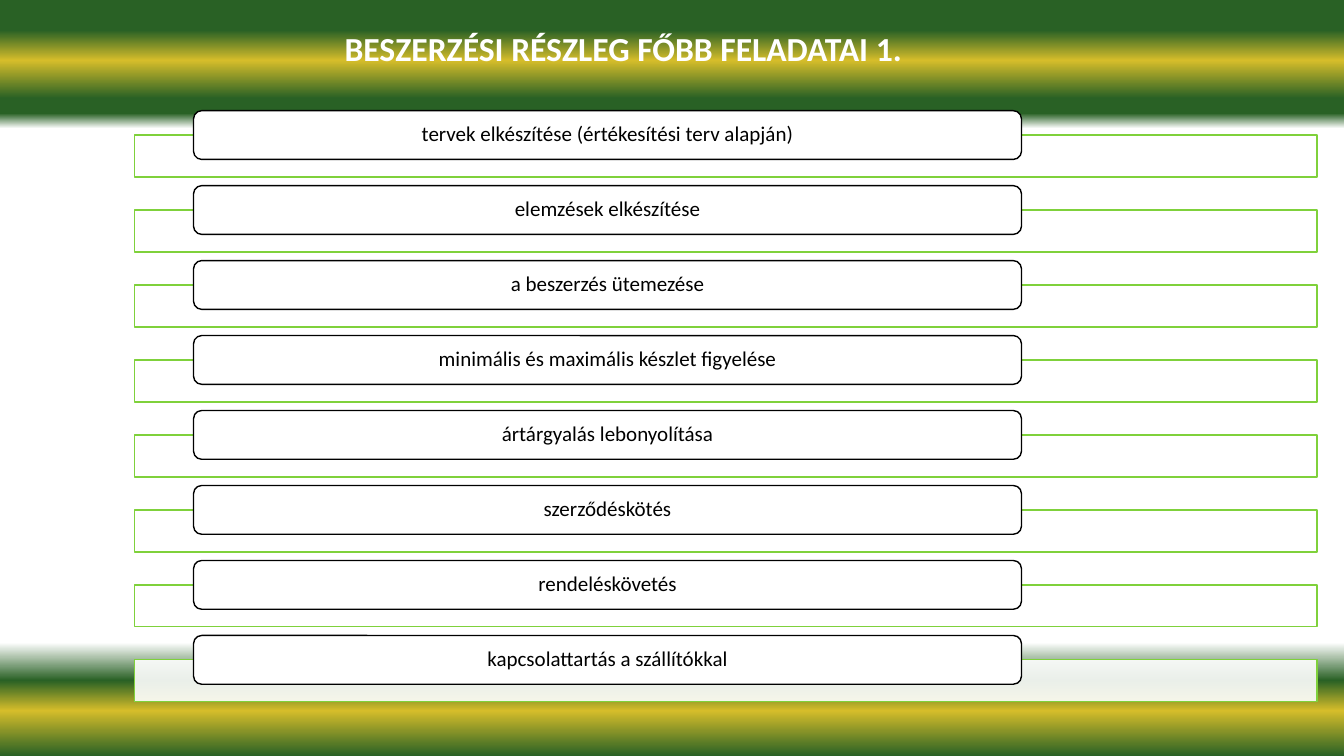
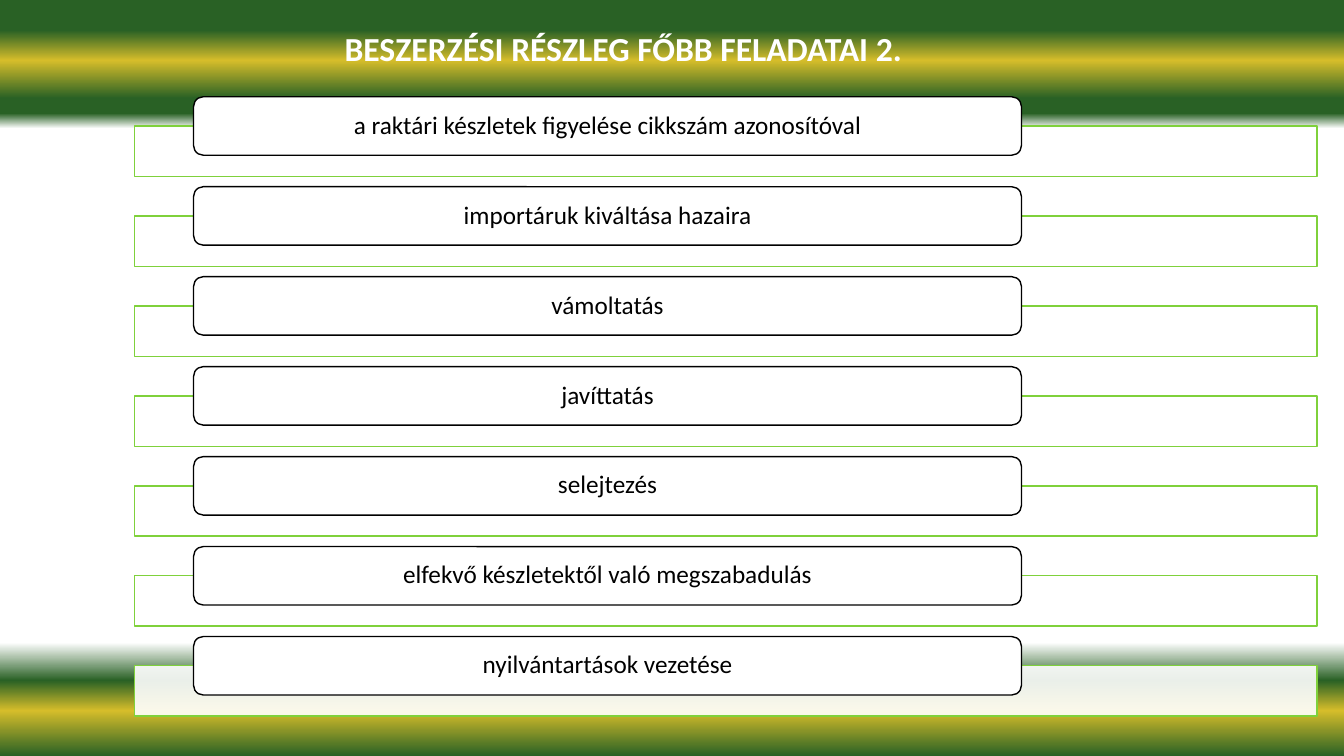
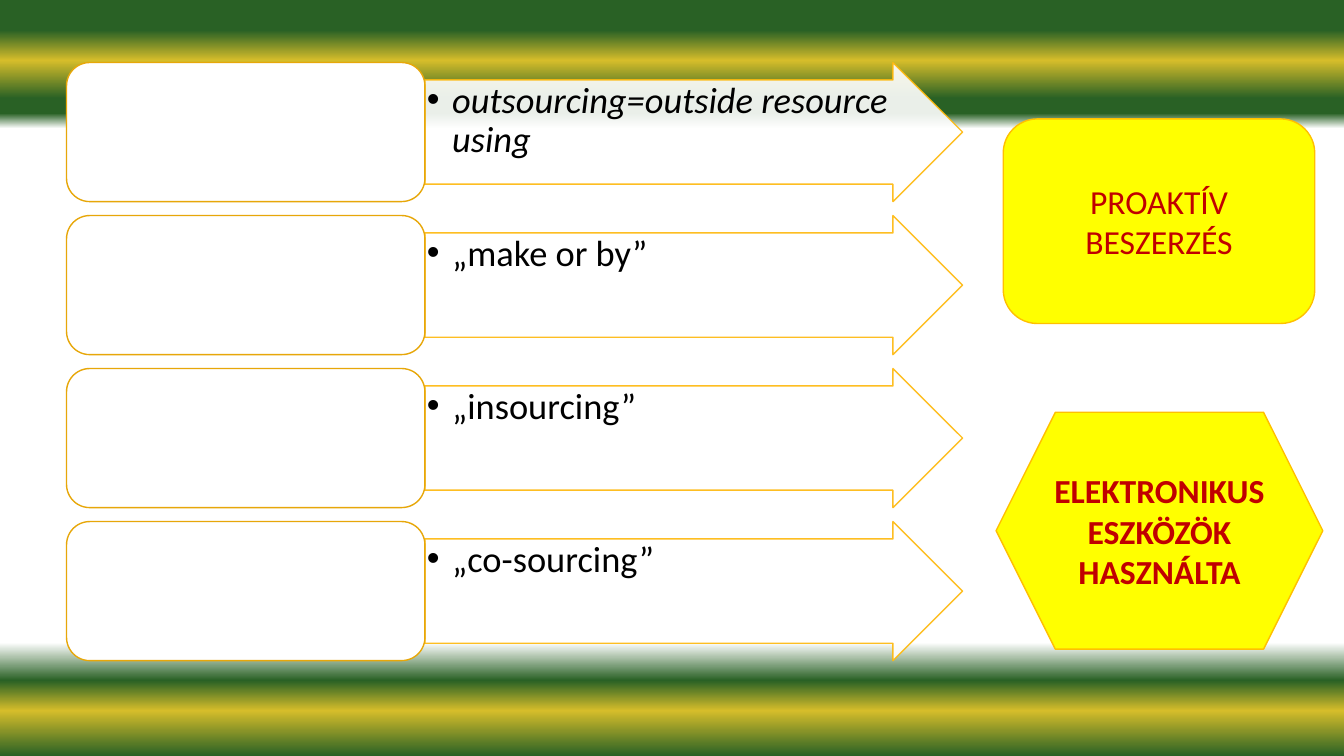
import dataclasses

import pptx
import pptx.dml.color
import pptx.enum.dml
import pptx.enum.shapes
import pptx.enum.text
import pptx.oxml
import pptx.oxml.ns
import pptx.util

Inches = pptx.util.Inches
Shape = pptx.enum.shapes.MSO_SHAPE
Align = pptx.enum.text.PP_ALIGN
Anchor = pptx.enum.text.MSO_ANCHOR
WIDTH, HEIGHT = 13.33, 7.5


@dataclasses.dataclass(frozen=True)
class Theme:
    font: str = "Calibri"
    green: str = "296125"
    gold: str = "D6BD2A"
    white: str = "FFFFFF"
    black: str = "000000"
    lime: str = "7FD13B"
    amber: str = "FEB80A"
    ochre: str = "E7A709"
    yellow: str = "FFFF00"
    orange: str = "FFC000"
    red: str = "C00000"
    title_size: int = 24
    callout_size: int = 24
    arrow_size: int = 26
    veil: int = 90  # opacity in percent


THEME = Theme()

BACKGROUND = [
    (4, THEME.green), (8, THEME.gold), (13, THEME.green), (15, THEME.green),
    (17, THEME.white), (85, THEME.white),
    (90, THEME.green), (94, THEME.gold), (100, THEME.green),
]

# Text size of the rows, top of the first bar, and the row labels
TASKS = [
    ("BESZERZÉSI RÉSZLEG FŐBB FELADATAI 1. ", 15, 1.34, [
        "tervek elkészítése (értékesítési terv alapján)",
        "elemzések elkészítése",
        "a beszerzés ütemezése",
        "minimális és maximális készlet figyelése",
        "ártárgyalás lebonyolítása",
        "szerződéskötés",
        "rendeléskövetés",
        "kapcsolattartás a szállítókkal",
    ]),
    ("BESZERZÉSI RÉSZLEG FŐBB FELADATAI 2. ", 18, 1.25, [
        "a raktári készletek figyelése cikkszám azonosítóval",
        "importáruk kiváltása hazaira",
        "vámoltatás",
        "javíttatás",
        "selejtezés",
        "elfekvő készletektől való megszabadulás",
        "nyilvántartások vezetése",
    ]),
]

SOURCING = [
    ("outsourcing=outside resource using", True),
    ("„make or by”", False),
    ("„insourcing”", False),
    ("„co-sourcing”", False),
]


def apply(target, values):
    for name, value in values.items():
        setattr(target, name, value)


def element(tag, **attributes):
    node = pptx.oxml.parse_xml(f"<a:{tag} {pptx.oxml.ns.nsdecls('a')}/>")
    apply_xml(node, attributes)
    return node


def apply_xml(node, attributes):
    for name, value in attributes.items():
        node.set(name, str(value))


def rgb(value):
    return pptx.dml.color.RGBColor.from_string(value)


def set_background(master):
    """Lay the gradient bands on the master, so that every page inherits them."""
    fill = master.background.fill
    fill.gradient()
    fill.gradient_angle = 270
    stops = master.element.xpath("./p:cSld/p:bg/p:bgPr/a:gradFill/a:gsLst")[0]
    for stop in list(stops):
        stops.remove(stop)
    for percent, color in BACKGROUND:
        stop = element("gs", pos=percent * 1000)
        stop.append(element("srgbClr", val=color))
        stops.append(stop)


def add_box(page, kind, place, fill, line, fill_opacity=100, line_opacity=100):
    box = page.shapes.add_shape(kind, *map(Inches, place))
    box.shadow.inherit = False
    box.line.width = pptx.util.Pt(1)
    paints = [(box.fill, fill, fill_opacity, "a:solidFill"),
              (box.line.fill, line, line_opacity, "a:ln/a:solidFill")]
    for paint, color, opacity, where in paints:
        paint.solid()
        paint.fore_color.rgb = rgb(color)
        if opacity < 100:
            node = box.element.spPr.xpath(f"./{where}/a:srgbClr")[0]
            node.append(element("alpha", val=opacity * 1000))
    return box


def write(box, text, size, color, frame=None, para=None, font=None):
    """Put one formatted paragraph in a box and return the paragraph."""
    apply(box.text_frame, {"word_wrap": True, **(frame or {})})
    line = box.text_frame.paragraphs[0]
    apply(line, {"alignment": Align.CENTER, **(para or {})})
    span = line.add_run()
    span.text = text
    apply(span.font, {"name": THEME.font, "size": pptx.util.Pt(size), **(font or {})})
    span.font.color.rgb = rgb(color)
    return line


def insets(side, top):
    return {"margin_left": Inches(side), "margin_right": Inches(side),
            "margin_top": Inches(top), "margin_bottom": Inches(top)}


def add_title(page, text):
    box = page.shapes.add_textbox(*map(Inches, (1.71, 0.23, 9.02, 0.5)))
    write(box, text, THEME.title_size, THEME.white, font={"bold": True},
          frame={"auto_size": pptx.enum.text.MSO_AUTO_SIZE.SHAPE_TO_FIT_TEXT})


def add_task_rows(page, tasks, size, top):
    """Stack bars with a label on each; all heights follow the text size."""
    em = size / 72
    left, width = 0.1 * WIDTH, 0.88 * WIDTH
    for row, task in enumerate(tasks):
        y = top + row * 3.57 * em
        add_box(page, Shape.RECTANGLE, (left, y, width, 2 * em),
                THEME.white, THEME.lime, fill_opacity=THEME.veil)
        label = add_box(page, Shape.ROUNDED_RECTANGLE,
                        (left + 0.05 * width, y - 1.16 * em, 0.7 * width, 2.32 * em),
                        THEME.white, THEME.black)
        write(label, task, size, THEME.black, para={"line_spacing": 0.9},
              frame={"vertical_anchor": Anchor.MIDDLE, **insets(0.31, 0)})


def add_bullet(para, indent):
    properties = para._p.get_or_add_pPr()
    apply_xml(properties, {"marL": Inches(indent), "indent": -Inches(indent)})
    properties.append(element("buFont", typeface="Arial"))
    properties.append(element("buChar", char="•"))


def add_arrow_rows(page, rows):
    left, width, top, height = 0.66, WIDTH * 2 / 3, 0.62, 1.38
    split = left + 0.4 * width
    for row, (text, italic) in enumerate(rows):
        y = top + row * 1.1 * height
        arrow = add_box(page, Shape.RIGHT_ARROW, (split, y, 0.6 * width, height),
                        THEME.white, THEME.amber, THEME.veil, THEME.veil)
        arrow.adjustments[0] = 0.75
        para = write(arrow, text, THEME.arrow_size, THEME.black,
                     frame={"vertical_anchor": Anchor.TOP, **insets(0.02, 0.02)},
                     para={"alignment": Align.LEFT, "level": 1, "line_spacing": 0.9},
                     font={"italic": italic})
        add_bullet(para, 0.25)
        add_box(page, Shape.ROUNDED_RECTANGLE, (left, y, 0.4 * width, height),
                THEME.white, THEME.ochre)


def add_callout(page, kind, place, text, bold):
    box = add_box(page, kind, place, THEME.yellow, THEME.orange)
    write(box, text, THEME.callout_size, THEME.red, font={"bold": bold},
          frame={"vertical_anchor": Anchor.MIDDLE})


def main():
    deck = pptx.Presentation()
    apply(deck, {"slide_width": Inches(WIDTH), "slide_height": Inches(HEIGHT)})
    set_background(deck.slide_master)
    blank = deck.slide_layouts[6]

    for title, size, top, tasks in TASKS:
        page = deck.slides.add_slide(blank)
        add_task_rows(page, tasks, size, top)
        add_title(page, title)

    page = deck.slides.add_slide(blank)
    add_arrow_rows(page, SOURCING)
    add_callout(page, Shape.ROUNDED_RECTANGLE, (9.95, 1.18, 3.09, 2.03),
                "PROAKTÍV BESZERZÉS", False)
    add_callout(page, Shape.HEXAGON, (9.88, 4.09, 3.24, 2.35),
                "ELEKTRONIKUS ESZKÖZÖK HASZNÁLTA", True)

    deck.save("out.pptx")


if __name__ == "__main__":
    main()
